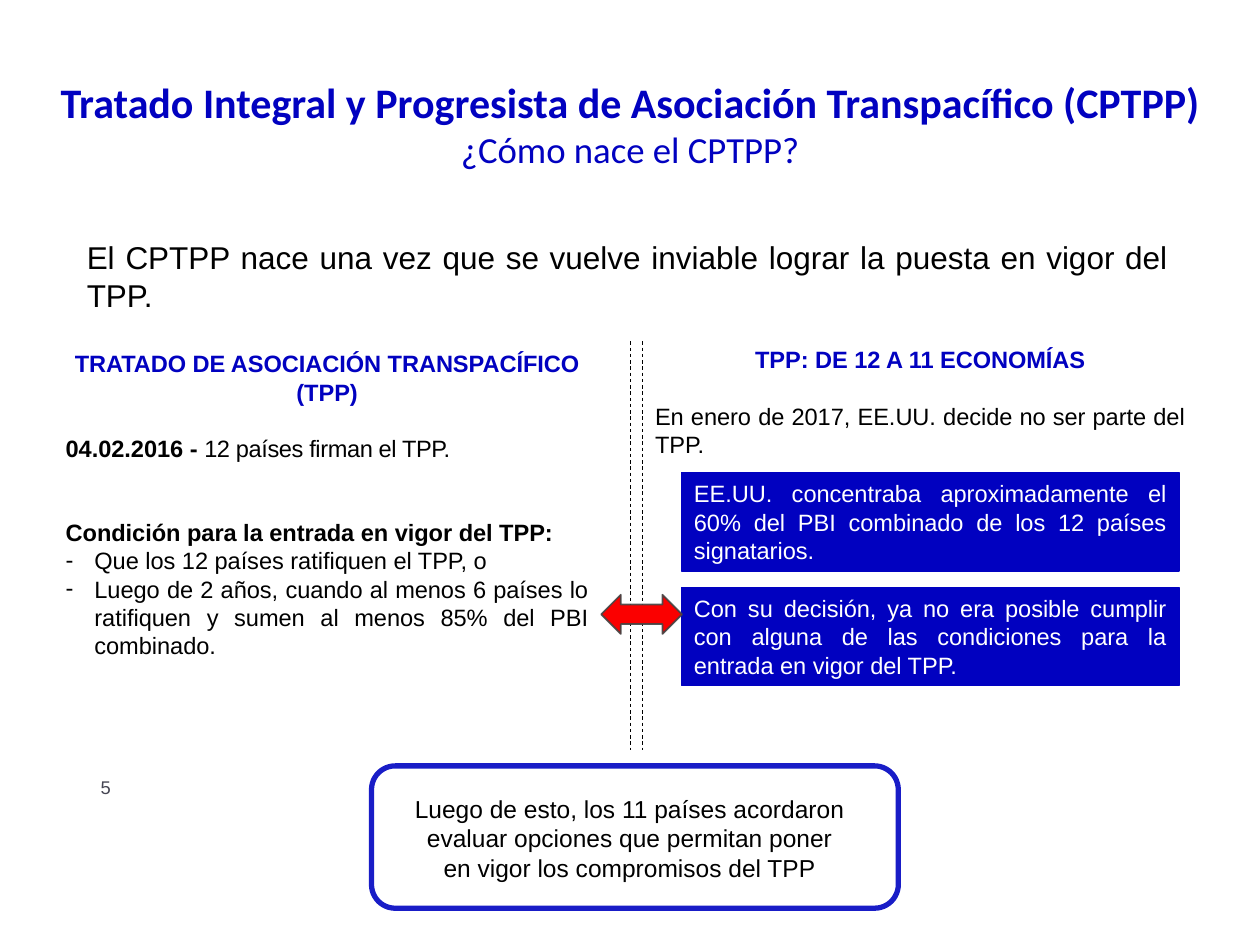
from dataclasses import dataclass, field
from typing import Any, NamedTuple

from lxml.etree import SubElement
from pptx import Presentation
from pptx.dml.color import RGBColor as Rgb
from pptx.enum.dml import MSO_LINE_DASH_STYLE as Dash
from pptx.enum.shapes import MSO_CONNECTOR as Link, MSO_SHAPE as Kind
from pptx.enum.text import MSO_ANCHOR as Anchor, MSO_AUTO_SIZE as Fit, PP_ALIGN as Align
from pptx.oxml.ns import qn
from pptx.util import Cm, Pt


@dataclass(frozen=True)
class Theme:
    """Colours, fonts and type sizes of the slide."""
    blue: str = "0101C0"
    edge: str = "0005C2"
    red: str = "FB0000"
    grey: str = "444444"
    slate: str = "464653"
    black: str = "000000"
    white: str = "FFFFFF"
    head: str = "Calibri"
    text: str = "Arial"
    title: float = 24
    sub: float = 21
    lead: float = 18
    close: float = 14
    body: float = 13.5
    foot: float = 10.5
    gap: float = 16


T = Theme()


class Area(NamedTuple):
    """Left, top, width and height in centimetres."""
    x: float
    y: float
    w: float
    h: float


class Run(NamedTuple):
    """A stretch of text in one format."""
    text: str
    size: float = T.body
    color: str = T.black
    bold: bool = False
    font: str = T.text
    track: int = 0


@dataclass(frozen=True)
class Para:
    """A paragraph with its alignment, space before and dash bullet."""
    runs: list[Run]
    align: Align = Align.JUSTIFY
    gap: float = 0
    dash: bool = False


@dataclass(frozen=True)
class Form:
    """A preset shape with its fill, outline and text."""
    kind: Kind
    area: Area
    fill: str | None
    line: str
    width: float
    alpha: int = 100
    paras: list[Para] = field(default_factory=list)


def put(obj: Any, **fmt: Any) -> None:
    """Set each format value on an object."""
    for name, value in fmt.items():
        setattr(obj, name, value)


def place(shape: Any, area: Area) -> None:
    """Move and size a shape."""
    for name, value in zip(("left", "top", "width", "height"), area):
        setattr(shape, name, Cm(value))


def write(shape: Any, paras: list[Para], anchor: Anchor = Anchor.TOP) -> None:
    """Fill a shape with formatted paragraphs."""
    frame = shape.text_frame
    put(frame, word_wrap=True, auto_size=Fit.NONE, vertical_anchor=anchor)
    for i, item in enumerate(paras):
        para = frame.add_paragraph() if i else frame.paragraphs[0]
        put(para, alignment=item.align, space_before=Pt(item.gap))
        props = para._p.get_or_add_pPr()
        inset = Cm(0.58) if item.dash else 0
        props.set("marL", str(inset))
        props.set("indent", str(-inset))
        if item.dash:
            SubElement(props, qn("a:buChar")).set("char", "-")
        else:
            SubElement(props, qn("a:buNone"))
        for part in item.runs:
            run = para.add_run()
            run.text = part.text
            put(run.font, size=Pt(part.size), bold=part.bold, name=part.font)
            run.font.color.rgb = Rgb.from_string(part.color)
            if part.track:
                run._r.get_or_add_rPr().set("spc", str(part.track))


def label(slide: Any, area: Area, paras: list[Para]) -> None:
    """Add a text box."""
    write(slide.shapes.add_textbox(*map(Cm, area)), paras)


def draw(slide: Any, form: Form) -> None:
    """Add a preset shape."""
    shape = slide.shapes.add_shape(form.kind, *map(Cm, form.area))
    shape.shadow.inherit = False
    if form.fill:
        shape.fill.solid()
        shape.fill.fore_color.rgb = Rgb.from_string(form.fill)
    else:
        shape.fill.background()
    shape.line.width = Pt(form.width)
    shape.line.color.rgb = Rgb.from_string(form.line)
    if form.alpha < 100:
        tint = shape.line._ln.find(".//" + qn("a:srgbClr"))
        SubElement(tint, qn("a:alpha")).set("val", str(form.alpha * 1000))
    if form.paras:
        write(shape, form.paras, Anchor.MIDDLE)


def rule(slide: Any, x: float, top: float, end: float) -> None:
    """Add a dashed upright line."""
    line = slide.shapes.add_connector(Link.STRAIGHT, Cm(x), Cm(top), Cm(x), Cm(end))
    put(line.line, width=Pt(0.5), dash_style=Dash.DASH)
    line.line.color.rgb = Rgb.from_string(T.black)
    SubElement(line._element.spPr, qn("a:effectLst"))


def head(text: str) -> Para:
    """Make a column heading."""
    return Para([Run(text, color=T.blue, bold=True)], Align.CENTER)


TITLE = [
    Para([Run("Tratado Integral y Progresista de Asociación Transpacífico (CPTPP)",
              T.title, T.blue, True, T.head)], Align.CENTER),
    Para([Run("¿Cómo nace el CPTPP?", T.sub, T.blue, font=T.head)], Align.CENTER),
]
LEFT = [
    head("TRATADO DE ASOCIACIÓN TRANSPACÍFICO (TPP)"),
    Para([Run("04.02.2016 - ", bold=True),
          Run("12 países firman el TPP.", track=-20)], gap=T.gap),
    Para([Run("Condición para la entrada en vigor del TPP:", bold=True)], gap=2 * T.gap),
    Para([Run("Que los 12 países ratifiquen el TPP, o")], dash=True),
    Para([Run("Luego de 2 años, cuando al menos 6 países lo ratifiquen "
              "y sumen al menos 85% del PBI combinado.")], dash=True),
]
RIGHT = [
    head("TPP: DE 12 A 11 ECONOMÍAS"),
    Para([Run("En enero de 2017, EE.UU. decide no ser parte del TPP.")], gap=T.gap),
]
FACTS = [
    "EE.UU. concentraba aproximadamente el 60% del PBI combinado de los 12 países signatarios.",
    "Con su decisión, ya no era posible cumplir con alguna de las condiciones "
    "para la entrada en vigor del TPP.",
]
LEAD = "El CPTPP nace una vez que se vuelve inviable lograr la puesta en vigor del TPP."
CLOSE = ("Luego de esto, los 11 países acordaron evaluar opciones que permitan poner "
         "en vigor los compromisos del TPP")
FORMS = [
    Form(Kind.RECTANGLE, Area(13.74, 9.53 + 2.31 * i, 10.03, 1.98), T.blue, T.blue, 0.75,
         paras=[Para([Run(fact, color=T.white)])])
    for i, fact in enumerate(FACTS)
] + [
    Form(Kind.LEFT_RIGHT_ARROW, Area(12.12, 11.99, 1.63, 0.79), T.red, T.grey, 1, 90),
    Form(Kind.ROUNDED_RECTANGLE, Area(7.49, 15.44, 10.62, 2.87), None, T.edge, 3, 90),
]


def main() -> None:
    """Build and save the slide."""
    deck = Presentation()
    put(deck, slide_width=Cm(25.4), slide_height=Cm(19.05))
    slide = deck.slides.add_slide(deck.slide_layouts[3])
    areas = (Area(0.79, 1.42, 23.83, 3.2), Area(1.07, 6.91, 11.05, 6.6),
             Area(12.95, 6.83, 11.2, 3.15))
    for shape, area, paras in zip(slide.placeholders, areas, (TITLE, LEFT, RIGHT)):
        place(shape, area)
        write(shape, paras)
    for x in (12.7, 12.95):
        rule(slide, x, 6.88, 15.11)
    for form in FORMS:
        draw(slide, form)
    label(slide, Area(1.5, 4.67, 22.3, 1.8), [Para([Run(LEAD, T.lead)])])
    label(slide, Area(8.1, 15.88, 9.19, 2.06), [Para([Run(CLOSE, T.close)], Align.CENTER)])
    label(slide, Area(1.78, 15.52, 5.72, 0.76),
          [Para([Run("5", T.foot, T.slate)], Align.LEFT)])
    deck.save("out.pptx")


if __name__ == "__main__":
    main()
